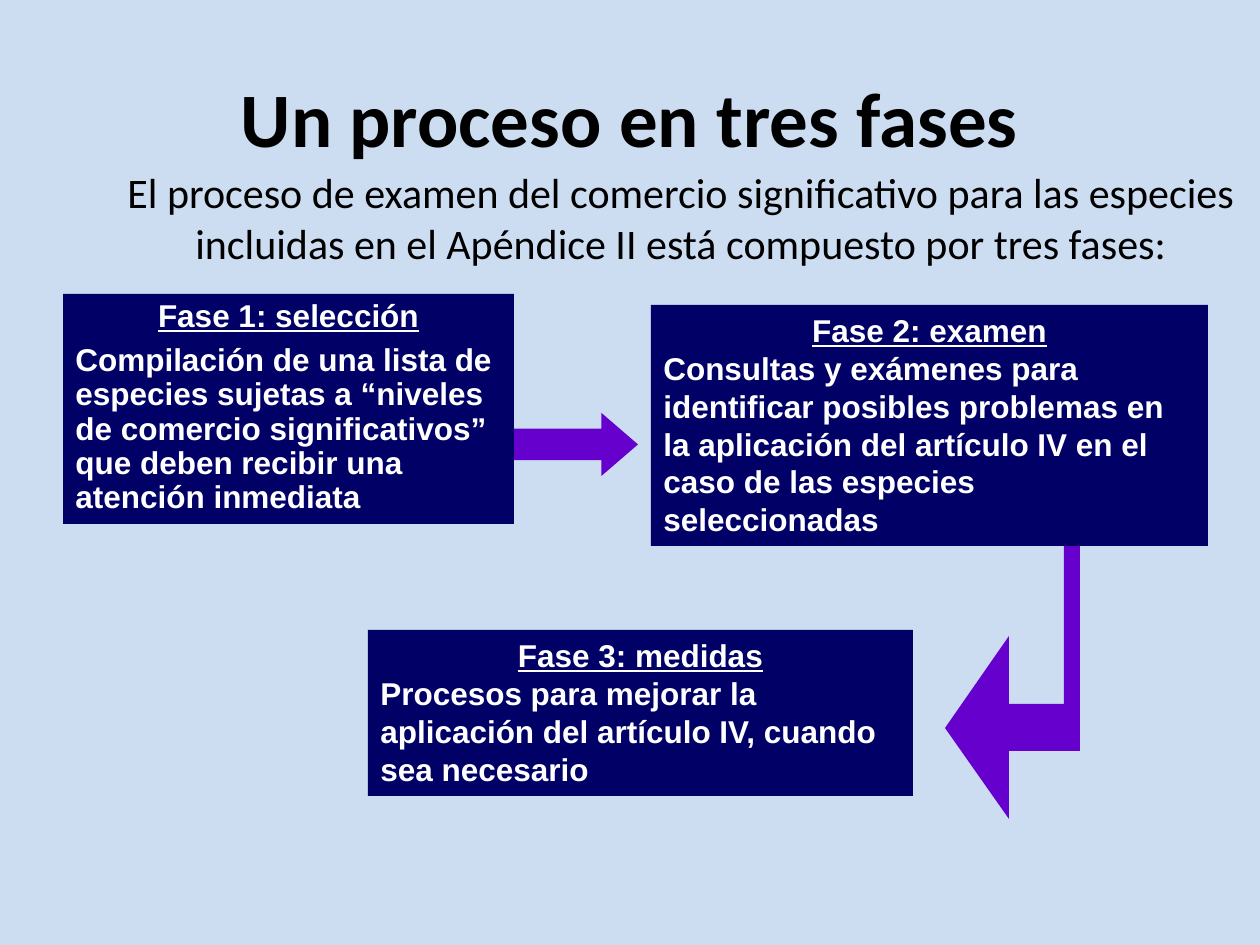
from dataclasses import dataclass

from pptx import Presentation
from pptx import util as u
from pptx.dml.color import RGBColor
from pptx.enum import shapes, text

PX = u.Inches(1) // 126
COLORS = {
    "background": "CCDDF2",
    "box": "000066",
    "arrow": "6600CC",
    "light": "FFFFFF",
    "dark": "000000",
}


@dataclass
class Phase:
    left: int
    top: int
    width: int
    height: int
    heading: str
    body: str
    line_spacing: float = 1.0
    space_after: int = 0


PHASES = [
    Phase(63, 294, 451, 230, "Fase 1: selección",
          "Compilación de una lista de especies sujetas a “niveles de comercio "
          "significativos” que deben recibir una atención inmediata", 0.9, 6),
    Phase(651, 305, 557, 241, "Fase 2: examen",
          "Consultas y exámenes para identificar posibles problemas en la "
          "aplicación del artículo IV en el caso de las especies seleccionadas"),
    Phase(368, 630, 545, 166, "Fase 3: medidas",
          "Procesos para mejorar la aplicación del artículo IV, cuando sea necesario"),
]

BENT_ARROW = [
    (1072, 347), (1042, 539), (1064, 539), (1064, 704), (1009, 704), (1009, 636),
    (945, 728), (1009, 819), (1009, 751), (1080, 751), (1080, 539), (1102, 539),
]


def color(name: str) -> RGBColor:
    return RGBColor.from_string(COLORS[name])


def place(left: int, top: int, width: int, height: int) -> list[int]:
    return [value * PX for value in (left, top, width, height)]


def paint(shape, name: str) -> None:
    shape.shadow.inherit = False
    shape.fill.solid()
    shape.fill.fore_color.rgb = color(name)
    shape.line.fill.background()


def style(para, size: int, face: str, ink: str, bold: bool = False,
          centred: bool = True, underline: bool = False) -> None:
    para.alignment = text.PP_ALIGN.CENTER if centred else text.PP_ALIGN.LEFT
    for span in para.runs:
        span.font.size = u.Pt(size)
        span.font.name = face
        span.font.bold = bold
        span.font.underline = underline
        span.font.color.rgb = color(ink)


def draw_phase(page, phase: Phase) -> None:
    box = page.shapes.add_shape(
        shapes.MSO_SHAPE.RECTANGLE,
        *place(phase.left, phase.top, phase.width, phase.height))
    paint(box, "box")
    frame = box.text_frame
    frame.word_wrap = True
    frame.vertical_anchor = text.MSO_ANCHOR.TOP
    frame.text = f"{phase.heading}\n{phase.body}"
    for index, para in enumerate(frame.paragraphs):
        is_heading = index == 0
        style(para, 18, "Arial", "light", bold=True,
              centred=is_heading, underline=is_heading)
        para.line_spacing = phase.line_spacing
        para.space_after = u.Pt(phase.space_after)


def main() -> None:
    deck = Presentation()
    deck.slide_width, deck.slide_height = u.Inches(10), u.Inches(7.5)
    page = deck.slides.add_slide(deck.slide_layouts[5])
    page.background.fill.solid()
    page.background.fill.fore_color.rgb = color("background")

    # Title
    title = page.shapes.title
    title.left, title.top, title.width, title.height = place(63, 38, 1134, 158)
    title.text_frame.text = "Un proceso en tres fases"
    title.text_frame.vertical_anchor = text.MSO_ANCHOR.MIDDLE
    style(title.text_frame.paragraphs[0], 44, "Calibri", "dark", bold=True)

    # Arrows between the phases, behind the boxes
    arrow = page.shapes.add_shape(shapes.MSO_SHAPE.RIGHT_ARROW,
                                  *place(491, 413, 147, 63))
    arrow.adjustments[0], arrow.adjustments[1] = 0.5, 0.58
    paint(arrow, "arrow")
    builder = page.shapes.build_freeform(*BENT_ARROW[0], scale=PX)
    builder.add_line_segments(BENT_ARROW[1:], close=True)
    paint(builder.convert_to_shape(), "arrow")

    # Introduction
    intro = page.shapes.add_textbox(*place(53, 147, 1207, 614))
    frame = intro.text_frame
    frame.word_wrap = True
    frame.margin_left, frame.margin_top = 61 * PX, 20 * PX
    frame.text = ("El proceso de examen del comercio significativo para las especies "
                  "incluidas en el Apéndice II está compuesto por tres fases:")
    style(frame.paragraphs[0], 24, "Calibri", "dark")

    # Phase boxes
    for phase in PHASES:
        draw_phase(page, phase)

    deck.save("out.pptx")


if __name__ == "__main__":
    main()
